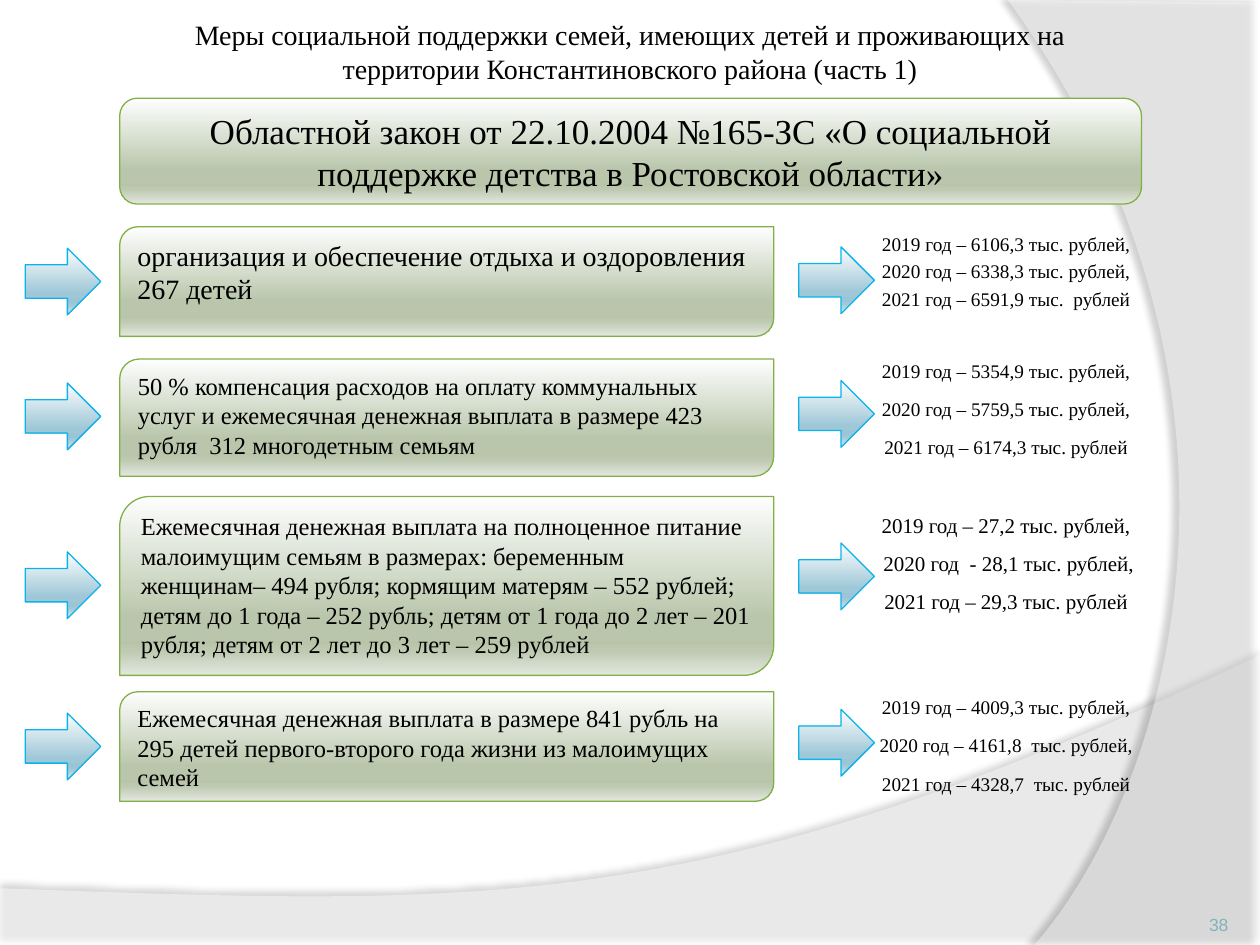
from lxml import etree
from pptx import Presentation
from pptx import util as u
from pptx.dml.color import RGBColor
from pptx.enum import shapes, text
from pptx.oxml import ns

HUES = {"ink": "000000", "white": "FFFFFF", "leaf": "80B046",
        "sky": "0AB3EC", "page": "83B3BB"}
STOPS = (0, 68, 81, 86, 100)
FADES = {"leaf": ("FEFEFE", "B9C6AB", "B7C4A8", "BEC9B1", "E3E7DE"),
         "sky": ("FEFEFF", "9EC7D7", "9BC5D6", "A5CAD9", "DAE8EE")}
KIND = shapes.MSO_SHAPE
ALIGN = text.PP_ALIGN
ANCHOR = text.MSO_ANCHOR


def node(root, tag, **attrs):
    return etree.SubElement(root, ns.qn(tag), {k: str(v) for k, v in attrs.items()})


def curve(a, b, c, d, steps=48):
    for i in range(1, steps + 1):
        t = i / steps
        s = 1 - t
        yield tuple(s**3 * p + 3 * s * s * t * q + 3 * s * t * t * r + t**3 * v
                    for p, q, r, v in zip(a, b, c, d))


def write(frame, lines, size=14, font="Times New Roman", hue="ink", align=ALIGN.LEFT,
          anchor=ANCHOR.TOP, lead=None, gap=0):
    frame.word_wrap = True
    frame.auto_size = text.MSO_AUTO_SIZE.NONE
    frame.vertical_anchor = anchor
    for i, line in enumerate(lines):
        para = frame.add_paragraph() if i else frame.paragraphs[0]
        para.text = line
        props = para._p.get_or_add_pPr()
        props.set("marL", "0")
        props.set("indent", "0")
        node(props, "a:buNone")
        para.alignment = align
        para.line_spacing = lead
        para.space_before = u.Pt(gap if i else 0)
        for run in para.runs:
            run.font.size = u.Pt(size)
            run.font.name = font
            run.font.color.rgb = RGBColor.from_string(HUES[hue])


class Deck:
    """Holds the style and the current slide, and draws each kind of element."""

    def __init__(self):
        self.show = Presentation()
        self.show.slide_width = u.Inches(10)
        self.show.slide_height = u.Inches(7.5)
        self.slide = self.show.slides.add_slide(self.show.slide_layouts[1])
        self.depth = 2

    def wave(self, points, alpha, shade, blur, dist, angle):
        spots = [(u.Inches(x), u.Inches(y)) for x, y in points]
        pen = self.slide.shapes.build_freeform(*spots[0], scale=1.0)
        pen.add_line_segments(spots[1:], close=True)
        shape = pen.convert_to_shape()
        shape.shadow.inherit = False
        shape.line.fill.background()
        shape.fill.solid()
        shape.fill.fore_color.rgb = RGBColor.from_string(HUES["white"])
        props = shape.element.spPr
        node(props.find(".//" + ns.qn("a:srgbClr")), "a:alpha", val=alpha * 1000)
        cast = node(props.find(ns.qn("a:effectLst")), "a:outerShdw",
                    blurRad=u.Pt(blur), dist=u.Pt(dist), dir=angle * 60000,
                    algn="ctr", rotWithShape=0)
        node(node(cast, "a:srgbClr", val=HUES["ink"]), "a:alpha", val=shade * 1000)
        self.slide.shapes._spTree.insert(self.depth, shape.element)
        self.depth += 1

    def holder(self, idx, box, lines, **style):
        shape = self.slide.placeholders[idx]
        shape.left, shape.top, shape.width, shape.height = map(u.Inches, box)
        write(shape.text_frame, lines, **style)

    def label(self, box, lines, inset=None, **style):
        frame = self.slide.shapes.add_textbox(*map(u.Inches, box)).text_frame
        if inset is not None:
            frame.margin_left = frame.margin_right = u.Inches(inset)
            frame.margin_top = frame.margin_bottom = u.Inches(inset)
        write(frame, lines, **style)

    def block(self, kind, box, hue, lines=(), **style):
        shape = self.slide.shapes.add_shape(kind, *map(u.Inches, box))
        shape.shadow.inherit = False
        shape.line.color.rgb = RGBColor.from_string(HUES[hue])
        shape.line.width = u.Pt(0.75)
        shape.fill.gradient()
        shape.fill.gradient_angle = 270
        fade = shape.element.spPr.find(".//" + ns.qn("a:gsLst"))
        fade.clear()
        for stop, tone in zip(STOPS, FADES[hue]):
            node(node(fade, "a:gs", pos=stop * 1000), "a:srgbClr", val=tone)
        write(shape.text_frame, lines, **style)

    def arrow(self, left, top):
        self.block(KIND.RIGHT_ARROW, (left, top, 0.6, 0.53), "sky")


ROWS = [
    dict(top=1.8, high=0.87, size=16, arrows=(1.97, 1.96),
         note="организация и обеспечение отдыха и оздоровления 267 детей",
         sums=(1.79, 0.88), style=dict(size=11, gap=2.6),
         years=["2019 год – 6106,3 тыс. рублей,",
                "2020 год – 6338,3 тыс. рублей,",
                "2021 год – 6591,9 тыс.  рублей"]),
    dict(top=2.85, high=0.93, size=14, arrows=(3.04, 3.02),
         note="50 % компенсация расходов на оплату коммунальных услуг и ежемесячная "
              "денежная выплата в размере 423 рубля  312 многодетным семьям",
         sums=(2.82, 0.96), style=dict(size=11, gap=10, lead=0.9),
         years=["2019 год – 5354,9 тыс. рублей,",
                "2020 год – 5759,5 тыс. рублей,",
                "2021 год – 6174,3 тыс. рублей"]),
    dict(top=3.94, high=1.42, size=14, arrows=(4.38, 4.31),
         note="Ежемесячная денежная выплата на полноценное питание малоимущим семьям "
              "в размерах: беременным женщинам– 494 рубля; кормящим матерям – 552 "
              "рублей; детям до 1 года – 252 рубль; детям от 1 года до 2 лет – 201 "
              "рубля; детям от 2 лет до 3 лет – 259 рублей",
         sums=(4.06, 0.91), style=dict(size=12, gap=10, lead=0.8),
         years=["2019 год – 27,2 тыс. рублей,",
                " 2020 год  - 28,1 тыс. рублей,",
                "2021 год – 29,3 тыс. рублей"]),
    dict(top=5.49, high=0.87, size=14, arrows=(5.66, 5.63),
         note="Ежемесячная денежная выплата в размере 841 рубль на 295 детей "
              "первого-второго года жизни из малоимущих семей",
         sums=(5.49, 0.87), style=dict(size=11, gap=10, lead=0.9),
         years=["2019 год – 4009,3 тыс. рублей,",
                "2020 год – 4161,8  тыс. рублей,",
                "2021 год – 4328,7  тыс. рублей"]),
]


def main():
    deck = Deck()
    low = curve((10, 5.2), (5.59, 7.29), (3.91, 7.19), (0, 7.05))
    deck.wave([(0, 7.05), (0, 7.51), (10, 7.51), (10, 5.2), *low], 45, 35, 4, 3.5, 270)
    side = curve((8.21, 7.5), (9.35, 6.19), (10.18, 3), (8, 0))
    deck.wave([(10, 0.02), (10, 7.5), (8.21, 7.5), *side], 40, 45, 4, 4, 180)

    deck.holder(0, (0.69, 0.07, 8.62, 0.67),
                ["Меры социальной поддержки семей, имеющих детей и проживающих на\v"
                 "территории Константиновского района (часть 1)"],
                size=16, align=ALIGN.CENTER, anchor=ANCHOR.MIDDLE)
    deck.block(KIND.ROUNDED_RECTANGLE, (0.95, 0.78, 8.11, 0.84), "leaf",
               ["Областной закон от 22.10.2004 №165-ЗС «О социальной поддержке "
                "детства в Ростовской области»"],
               size=20, align=ALIGN.CENTER, anchor=ANCHOR.MIDDLE)

    for i, row in enumerate(ROWS):
        deck.block(KIND.ROUND_2_DIAG_RECTANGLE, (0.95, row["top"], 5.19, row["high"]),
                   "leaf", [row["note"]], size=row["size"])
        top, high = row["sums"]
        box = (6.83, top, 2.31, high)
        style = dict(row["style"], align=ALIGN.CENTER)
        if i:
            deck.label(box, row["years"], **style)
        else:
            deck.holder(1, box, row["years"], **style)
        for left, spot in zip((0.2, 6.34), row["arrows"]):
            deck.arrow(left, spot)

    deck.label((8.92, 7.02, 0.83, 0.4), ["38"], inset=0, size=10, font="Arial",
               hue="page", align=ALIGN.RIGHT, anchor=ANCHOR.BOTTOM)
    deck.show.save("out.pptx")


if __name__ == "__main__":
    main()
